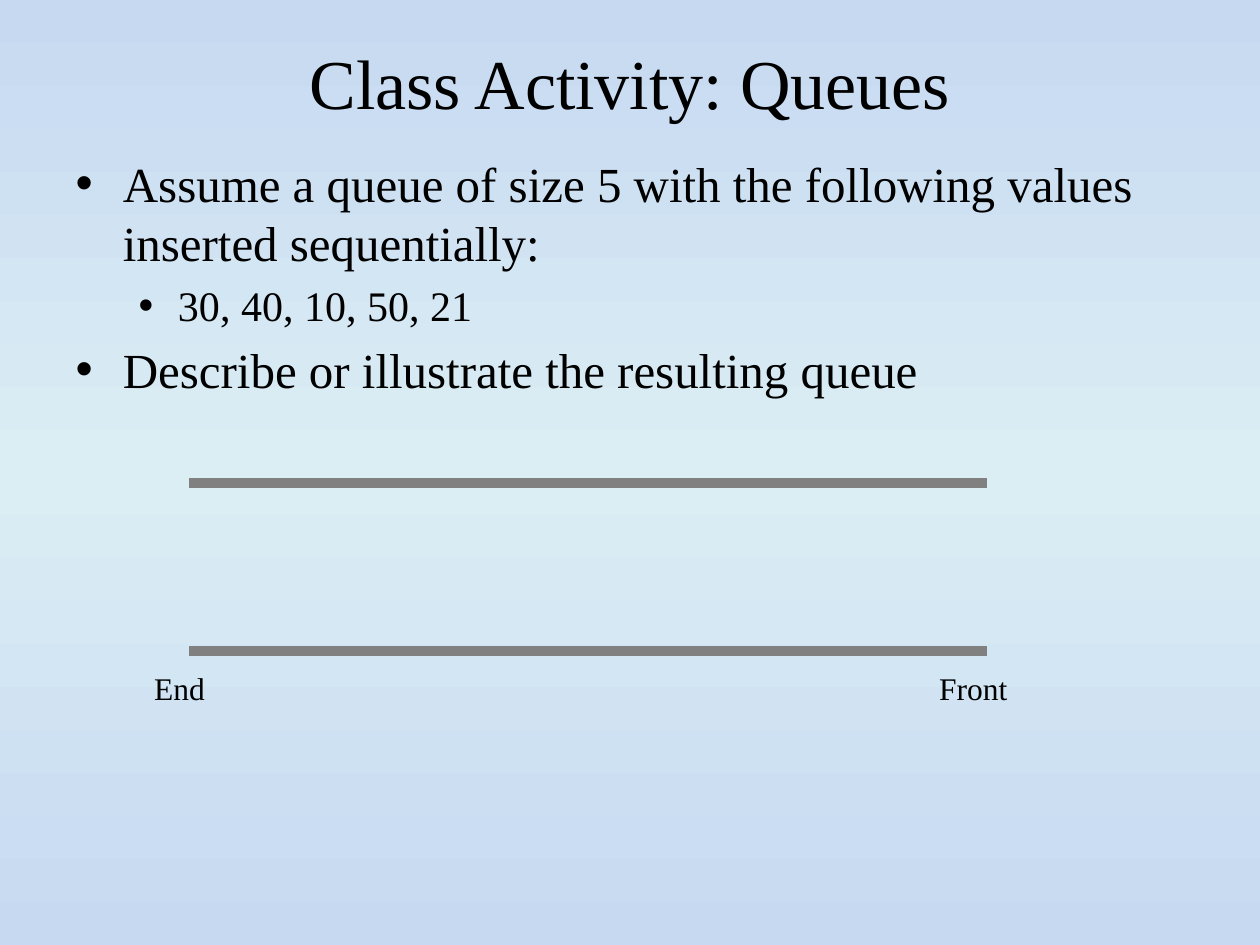
from copy import deepcopy

from pptx import Presentation
from pptx.dml.color import RGBColor
from pptx.enum.shapes import MSO_CONNECTOR
from pptx.enum.text import MSO_ANCHOR, MSO_AUTO_SIZE, PP_ALIGN
from pptx.oxml.ns import qn
from pptx.util import Pt

FONT = "Times New Roman"
BLACK = RGBColor(0x00, 0x00, 0x00)
GRAY = RGBColor(0x80, 0x80, 0x80)
BLUE = RGBColor(0xC6, 0xD9, 0xF1)
PALE = RGBColor(0xDB, 0xEE, 0xF4)


def style(para, size):
    para.font.name = FONT
    para.font.size = Pt(size)
    para.font.color.rgb = BLACK


def place(shape, left, top, width, height):
    shape.left, shape.top = Pt(left), Pt(top)
    shape.width, shape.height = Pt(width), Pt(height)


deck = Presentation()
deck.slide_width, deck.slide_height = Pt(720), Pt(540)
page = deck.slides.add_slide(deck.slide_layouts[1])

# Background: vertical gradient, palest in the middle
fill = page.background.fill
fill.gradient()
fill.gradient_angle = 270
stop_list = next(page.element.iter(qn("a:gsLst")))
stop_list.insert(1, deepcopy(stop_list[0]))
for stop, position, color in zip(fill.gradient_stops, (0, 0.5, 1), (BLUE, PALE, BLUE)):
    stop.position = position
    stop.color.rgb = color

# Title
title = page.shapes.title
place(title, 36, 21.6, 648, 50.4)
title.text_frame.text = "Class Activity: Queues"
title.text_frame.auto_size = MSO_AUTO_SIZE.NONE
title.text_frame.vertical_anchor = MSO_ANCHOR.MIDDLE
title.text_frame.paragraphs[0].alignment = PP_ALIGN.CENTER
style(title.text_frame.paragraphs[0], 40)

# Bulleted task
body = page.placeholders[1]
place(body, 36, 84, 648, 162)
frame = body.text_frame
frame.auto_size = MSO_AUTO_SIZE.NONE
items = [
    ("Assume a queue of size 5 with the following values inserted sequentially:", 0, 28),
    ("30, 40, 10, 50, 21", 1, 24),
    ("Describe or illustrate the resulting queue", 0, 28),
]
frame.text = "\n".join(text for text, level, size in items)
for para, (text, level, size) in zip(frame.paragraphs, items):
    para.level = level
    style(para, size)
    bullet = para._p.get_or_add_pPr().makeelement(qn("a:buChar"), {"char": "•"})
    para._p.pPr.insert_element_before(bullet, "a:tabLst", "a:defRPr", "a:extLst")

# Queue walls
for y in (276, 372):
    wall = page.shapes.add_connector(MSO_CONNECTOR.STRAIGHT, Pt(108), Pt(y), Pt(564), Pt(y))
    wall.line.color.rgb = GRAY
    wall.line.width = Pt(6)
    properties = wall._element.spPr
    properties.append(properties.makeelement(qn("a:effectLst"), {}))

# Labels for the two ends of the queue
for text, left, width in (("Front", 529.6, 54), ("End", 81, 44)):
    box = page.shapes.add_textbox(Pt(left), Pt(378.7), Pt(width), Pt(29))
    box.text_frame.word_wrap = False
    box.text_frame.auto_size = MSO_AUTO_SIZE.SHAPE_TO_FIT_TEXT
    box.text_frame.text = text
    style(box.text_frame.paragraphs[0], 18)

deck.save("out.pptx")
